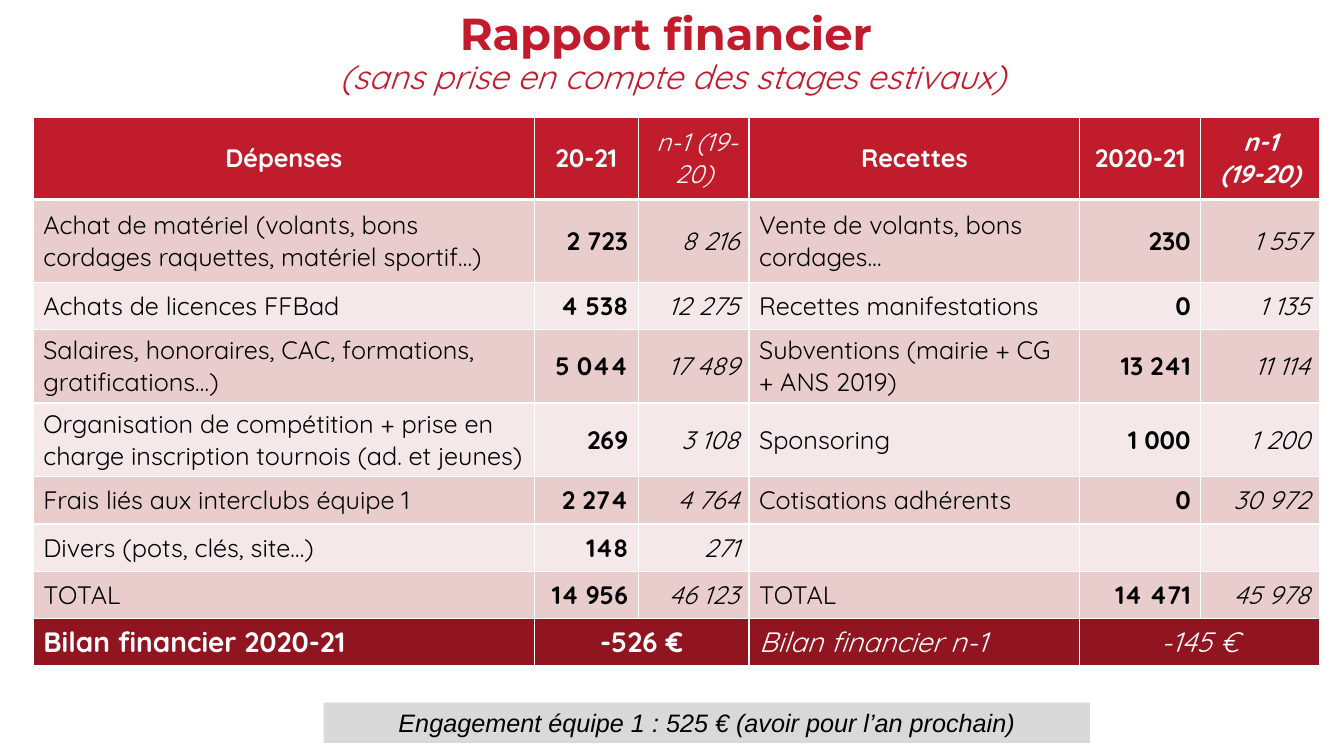
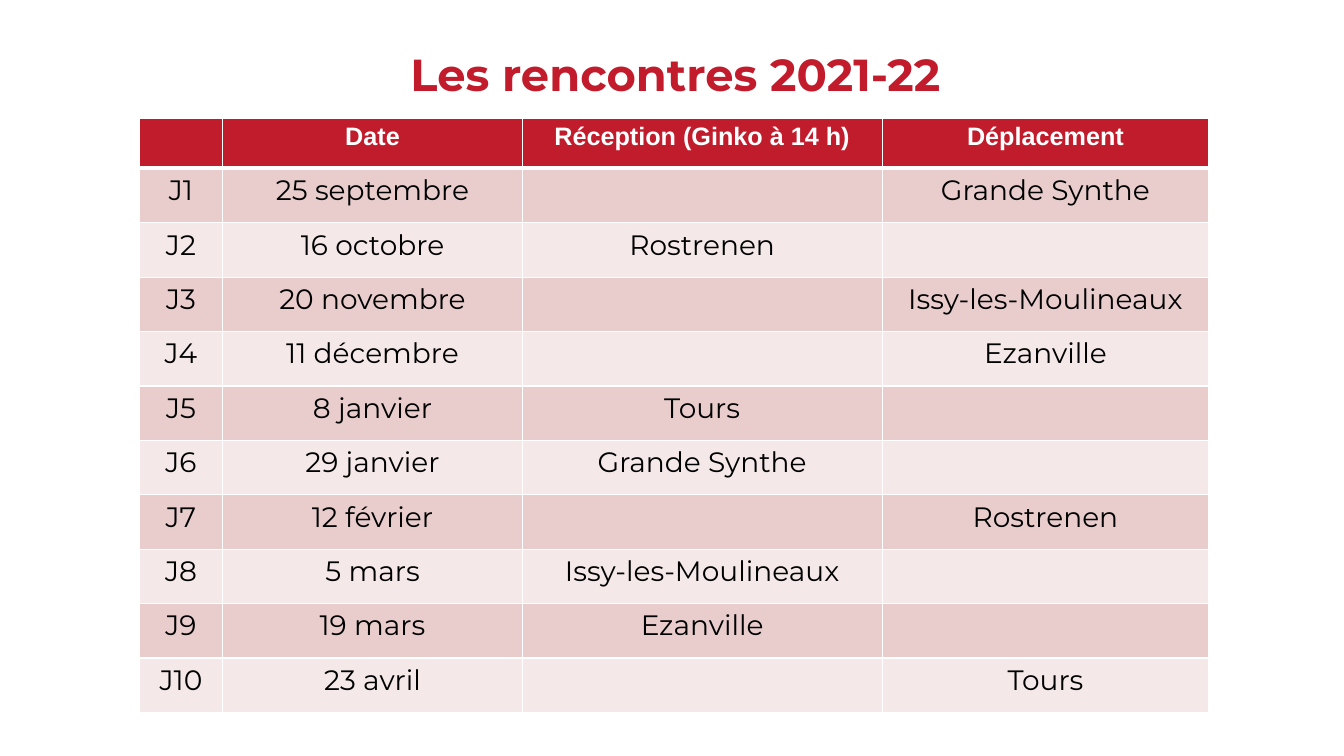
import collections

import lxml.etree
import pptx
import pptx.dml.color
import pptx.enum.shapes
import pptx.enum.text
import pptx.oxml.ns
import pptx.util

PX = 9144
COLOURS = {
    "title": "C21B2C",
    "header": "C11C2C",
    "odd": "E9CDCD",
    "even": "F4E8E8",
    "total": "911521",
    "note": "D9D9D9",
    "white": "FFFFFF",
    "black": "000000",
}
ALIGN = pptx.enum.text.PP_ALIGN
ANCHOR = pptx.enum.text.MSO_ANCHOR
FIT = pptx.enum.text.MSO_AUTO_SIZE

Look = collections.namedtuple(
    "Look", "font size colour align bold italic",
    defaults=("black", ALIGN.CENTER, False, False))

TITLE = Look("Montserrat", 32, "title", bold=True)
SUBTITLE = Look("Quicksand", 24, "title", italic=True)
NOTE = Look("Arial", 18, italic=True)

LABEL = Look("Quicksand", 18, align=ALIGN.LEFT)
CURRENT = LABEL._replace(align=ALIGN.RIGHT, bold=True)
PREVIOUS = LABEL._replace(align=ALIGN.RIGHT, italic=True)
FINANCE_HEAD = Look("Quicksand", 18, "white", bold=True)
RESULT = Look("Quicksand", 20, "white", bold=True)
OLD_RESULT = RESULT._replace(bold=False, italic=True)

MATCH = Look("Montserrat", 20)
MATCH_HEAD = Look("Arial", 18, "white", bold=True)

FINANCES = [
    ("Dépenses", "20-21", " n-1 (19-20)", "Recettes", "2020-21", "n-1\n(19-20)"),
    ("Achat de matériel (volants, bons cordages raquettes, matériel sportif…)",
     "2 723", "8 216", "Vente de volants, bons cordages…", "230", "1 557"),
    ("Achats de licences FFBad", "4 538", "12 275",
     "Recettes manifestations", "0", "1 135"),
    ("Salaires, honoraires, CAC, formations, gratifications…)", "5 044", "17 489",
     "Subventions (mairie + CG + ANS 2019)", "13 241", "11 114"),
    ("Organisation de compétition + prise en charge inscription tournois "
     "(ad. et jeunes)", "269", "3 108", "Sponsoring", "1 000", "1 200"),
    ("Frais liés aux interclubs équipe 1", "2 274", "4 764",
     "Cotisations adhérents", "0", "30 972"),
    ("Divers (pots, clés, site…)", "148", "271", "", "", ""),
    ("TOTAL", "14 956", "46 123", "TOTAL", "14 471", "45 978"),
    ("Bilan financier 2020-21", "-526 €", "", "Bilan financier n-1", "-145 €", ""),
]
FINANCE_LOOKS = [
    [FINANCE_HEAD, FINANCE_HEAD, FINANCE_HEAD._replace(bold=False, italic=True),
     FINANCE_HEAD, FINANCE_HEAD, FINANCE_HEAD._replace(italic=True)],
    *[[LABEL, CURRENT, PREVIOUS] * 2] * 7,
    [RESULT._replace(align=ALIGN.LEFT), RESULT, RESULT,
     OLD_RESULT._replace(align=ALIGN.LEFT), OLD_RESULT, OLD_RESULT],
]

MATCHES = [
    ("", "Date", "Réception (Ginko à 14 h)", "Déplacement"),
    ("J1", "25 septembre", "", "Grande Synthe"),
    ("J2", "16 octobre", "Rostrenen", ""),
    ("J3", "20 novembre", "", "Issy-les-Moulineaux"),
    ("J4", "11 décembre", "", "Ezanville"),
    ("J5", "8 janvier", "Tours", ""),
    ("J6", "29 janvier", "Grande Synthe", ""),
    ("J7", "12 février", "", "Rostrenen"),
    ("J8", "5 mars", "Issy-les-Moulineaux", ""),
    ("J9", "19 mars", "Ezanville", ""),
    ("J10", "23 avril", "", "Tours"),
]
MATCH_LOOKS = [[MATCH_HEAD] * 4] + [[MATCH] * 4] * 10


class Report:
    """Holds the deck, its style and the current page."""

    def __init__(self):
        self.deck = pptx.Presentation()
        self.deck.slide_width = 1333 * PX
        self.deck.slide_height = 750 * PX
        self.page = None

    def rgb(self, name):
        return pptx.dml.color.RGBColor.from_string(COLOURS[name])

    def fill(self, target, name):
        target.fill.solid()
        target.fill.fore_color.rgb = self.rgb(name)

    def style(self, span, look):
        span.font.name = look.font
        span.font.size = pptx.util.Pt(look.size)
        span.font.bold = look.bold
        span.font.italic = look.italic
        span.font.color.rgb = self.rgb(look.colour)

    def set_text(self, frame, text, look):
        frame.text = text
        for para in frame.paragraphs:
            para.alignment = look.align
            for span in para.runs:
                self.style(span, look)

    def add_page(self, left, top, width, height, title, subtitle=None):
        self.page = self.deck.slides.add_slide(self.deck.slide_layouts[5])
        box = self.page.shapes.title
        box.left, box.top, box.width, box.height = (
            length * PX for length in (left, top, width, height))
        frame = box.text_frame
        frame.auto_size = FIT.NONE
        frame.vertical_anchor = ANCHOR.MIDDLE
        para = frame.paragraphs[0]
        para.text = f"{title} \v{subtitle}" if subtitle else title
        para.alignment = ALIGN.CENTER
        para.line_spacing = 0.9
        for span, look in zip(para.runs, (TITLE, SUBTITLE)):
            self.style(span, look)
        name = pptx.oxml.ns.qn
        for line_break in para._p.findall(name("a:br")):
            lxml.etree.SubElement(line_break, name("a:rPr"), sz=str(TITLE.size * 100))

    def border(self, cell, side, points):
        name = pptx.oxml.ns.qn
        line = lxml.etree.SubElement(
            cell._tc.get_or_add_tcPr(), name(f"a:ln{side}"),
            w=str(pptx.util.Pt(points)))
        solid = lxml.etree.SubElement(line, name("a:solidFill"))
        lxml.etree.SubElement(solid, name("a:srgbClr"), val=COLOURS["white"])

    def add_table(self, left, top, widths, heights, rows, looks, fills, anchor):
        table = self.page.shapes.add_table(
            len(rows), len(widths), left * PX, top * PX,
            sum(widths) * PX, sum(heights) * PX).table
        for column, width in zip(table.columns, widths):
            column.width = width * PX
        for index, height in enumerate(heights):
            table.rows[index].height = height * PX
            for column, text in enumerate(rows[index]):
                cell = table.cell(index, column)
                cell.vertical_anchor = anchor
                for side in "LRTB":
                    under_header = (index, side) in ((0, "B"), (1, "T"))
                    self.border(cell, side, 3 if under_header else 1)
                self.fill(cell, fills[index])
                self.set_text(cell.text_frame, text, looks[index][column])
        return table

    def add_note(self, left, top, width, height, text):
        box = self.page.shapes.add_shape(
            pptx.enum.shapes.MSO_SHAPE.RECTANGLE,
            left * PX, top * PX, width * PX, height * PX)
        box.shadow.inherit = False
        box.line.fill.background()
        self.fill(box, "note")
        box.text_frame.word_wrap = True
        box.text_frame.auto_size = FIT.SHAPE_TO_FIT_TEXT
        box.text_frame.vertical_anchor = ANCHOR.TOP
        self.set_text(box.text_frame, text, NOTE)


def main():
    report = Report()

    report.add_page(92, 12, 1150, 83, "Rapport financier",
                    "(sans prise en compte des stages estivaux)")
    table = report.add_table(
        33, 116, [497, 103, 110, 328, 120, 118],
        [82, 82, 47, 73, 73, 47, 47, 47, 47], FINANCES, FINANCE_LOOKS,
        ["header"] + ["odd", "even"] * 3 + ["odd", "total"], ANCHOR.MIDDLE)
    for column in (1, 4):
        table.cell(8, column).merge(table.cell(8, column + 1))
    report.add_note(321, 697, 760, 40,
                    "Engagement équipe 1 : 525 € (avoir pour l’an prochain)")

    report.add_page(95, 54, 1150, 45, "Les rencontres 2021-22")
    report.add_table(
        138, 117, [83, 297, 357, 324], [50] + [54] * 10, MATCHES, MATCH_LOOKS,
        ["header"] + ["odd", "even"] * 5, ANCHOR.TOP)

    report.deck.save("out.pptx")


if __name__ == "__main__":
    main()
